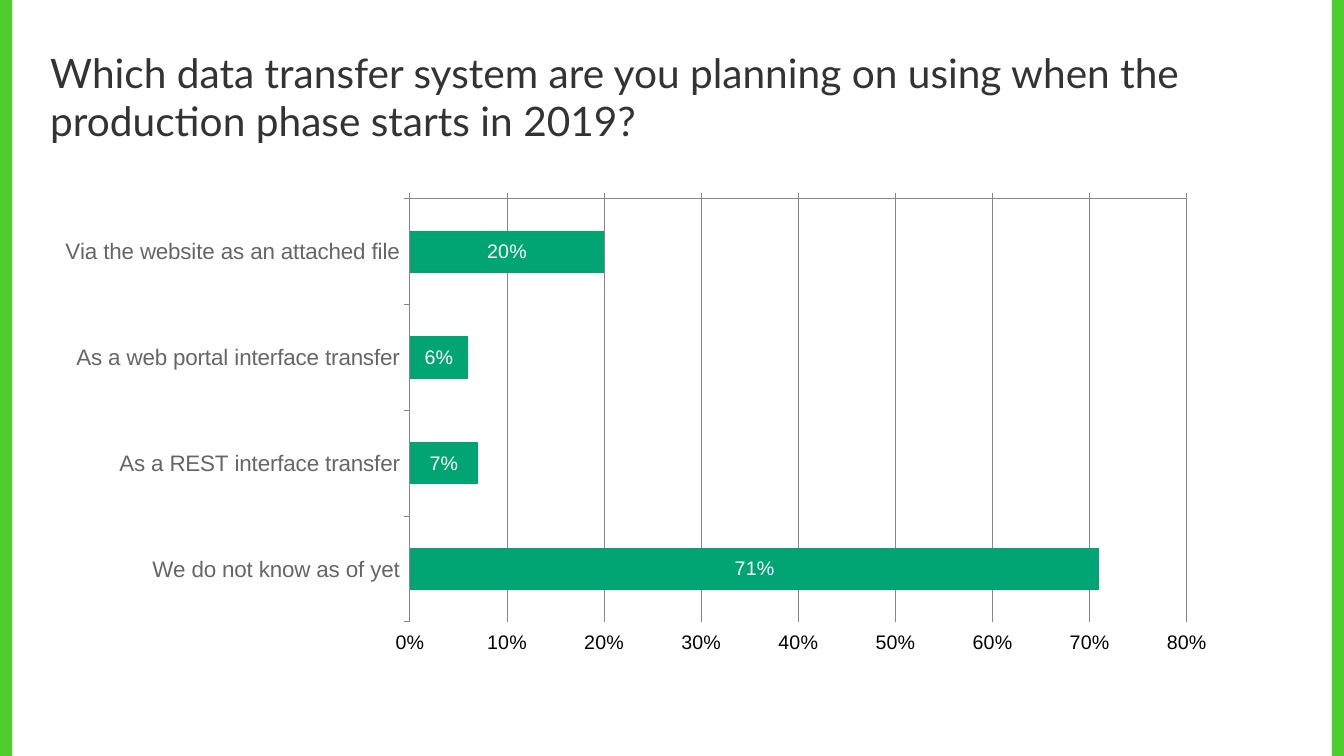
from pptx import Presentation
from pptx.chart.data import CategoryChartData
from pptx.dml.color import RGBColor
from pptx.enum.chart import XL_CHART_TYPE, XL_LABEL_POSITION, XL_TICK_LABEL_POSITION, XL_TICK_MARK
from pptx.enum.shapes import MSO_SHAPE
from pptx.enum.text import MSO_ANCHOR
from pptx.oxml import parse_xml
from pptx.oxml.ns import qn
from pptx.util import Inches, Pt

HUES = {"edge": "4DCE2E", "title": "333333", "bar": "00A573", "label": "666666",
        "text": "000000", "grid": "878787", "white": "FFFFFF"}
SPACE = "http://schemas.openxmlformats.org/drawingml/2006/chart"


class Page:
    def __init__(self, deck):
        self.col = deck.slide_width / 100
        self.row = deck.slide_height / 100
        self.slide = deck.slides.add_slide(deck.slide_layouts[6])

    def hue(self, name):
        return RGBColor.from_string(HUES[name])

    def area(self, left, top, width, height):
        return (round(left * self.col), round(top * self.row),
                round(width * self.col), round(height * self.row))

    def style(self, font, face, size, hue):
        font.name, font.size, font.bold = face, Pt(size), False
        font.color.rgb = self.hue(hue)

    def band(self, *area):
        shape = self.slide.shapes.add_shape(MSO_SHAPE.RECTANGLE, *self.area(*area))
        shape.shadow.inherit = False
        shape.fill.solid()
        shape.fill.fore_color.rgb = self.hue("edge")
        shape.line.fill.background()

    def title(self, text, *area):
        frame = self.slide.shapes.add_textbox(*self.area(*area)).text_frame
        frame.word_wrap = True
        frame.vertical_anchor = MSO_ANCHOR.MIDDLE
        frame.text = text
        self.style(frame.paragraphs[0].runs[0].font, "Lato", 29, "title")

    def line(self, form):
        form.line.color.rgb = self.hue("grid")
        form.line.width = Pt(0.75)

    def place(self, chart, **shares):
        plot = chart.element.find(".//" + qn("c:plotArea"))
        for old in plot.findall(qn("c:layout")):
            plot.remove(old)
        modes = '<c:xMode val="edge"/><c:yMode val="edge"/>'
        sizes = "".join(f'<c:{key} val="{share / 100}"/>' for key, share in shares.items())
        plot.insert(0, parse_xml(
            f'<c:layout xmlns:c="{SPACE}"><c:manualLayout><c:layoutTarget val="inner"/>'
            f'{modes}{sizes}</c:manualLayout></c:layout>'))

    def chart(self, rows, *area):
        data = CategoryChartData(number_format="0%")
        data.categories = list(rows)
        data.add_series("Series 1", list(rows.values()))
        chart = self.slide.shapes.add_chart(
            XL_CHART_TYPE.BAR_CLUSTERED, *self.area(*area), data).chart
        chart.has_legend = chart.has_title = False
        self.style(chart.font, "Arial", 14, "text")
        self.place(chart, x=30.9, y=1.8, w=65.3, h=89.5)

        names, scale = chart.category_axis, chart.value_axis
        names.reverse_order = True
        names.tick_label_position = XL_TICK_LABEL_POSITION.LOW
        self.style(names.tick_labels.font, "Arial", 16, "label")
        scale.minimum_scale, scale.maximum_scale, scale.major_unit = 0, 0.8, 0.1
        scale.tick_label_position = XL_TICK_LABEL_POSITION.HIGH
        scale.tick_labels.number_format = "0%"
        scale.tick_labels.number_format_is_linked = False
        scale.has_major_gridlines = True
        self.line(scale.major_gridlines.format)
        for axis in (names, scale):
            axis.major_tick_mark = XL_TICK_MARK.OUTSIDE
            self.line(axis.format)

        plot = chart.plots[0]
        plot.gap_width = 150
        plot.vary_by_categories = False
        fill = plot.series[0].format.fill
        fill.solid()
        fill.fore_color.rgb = self.hue("bar")
        plot.has_data_labels = True
        labels = plot.data_labels
        labels.show_value = True
        labels.number_format = "0%"
        labels.number_format_is_linked = False
        labels.position = XL_LABEL_POSITION.CENTER
        self.style(labels.font, "Arial", 14, "white")


def main():
    deck = Presentation()
    deck.slide_width, deck.slide_height = Inches(13.33), Inches(7.5)
    page = Page(deck)
    for left in (0, 99.1):
        page.band(left, 0, 0.9, 100)
    page.title("Which data transfer system are you planning on using when the "
               "production phase starts in 2019?", 3, 5.6, 88.67, 14.27)
    page.chart({"Via the website as an attached file": 0.2,
                "As a web portal interface transfer": 0.06,
                "As a REST interface transfer": 0.07,
                "We do not know as of yet": 0.71}, 3.15, 25.2, 88.52, 62.53)
    deck.save("out.pptx")


if __name__ == "__main__":
    main()
